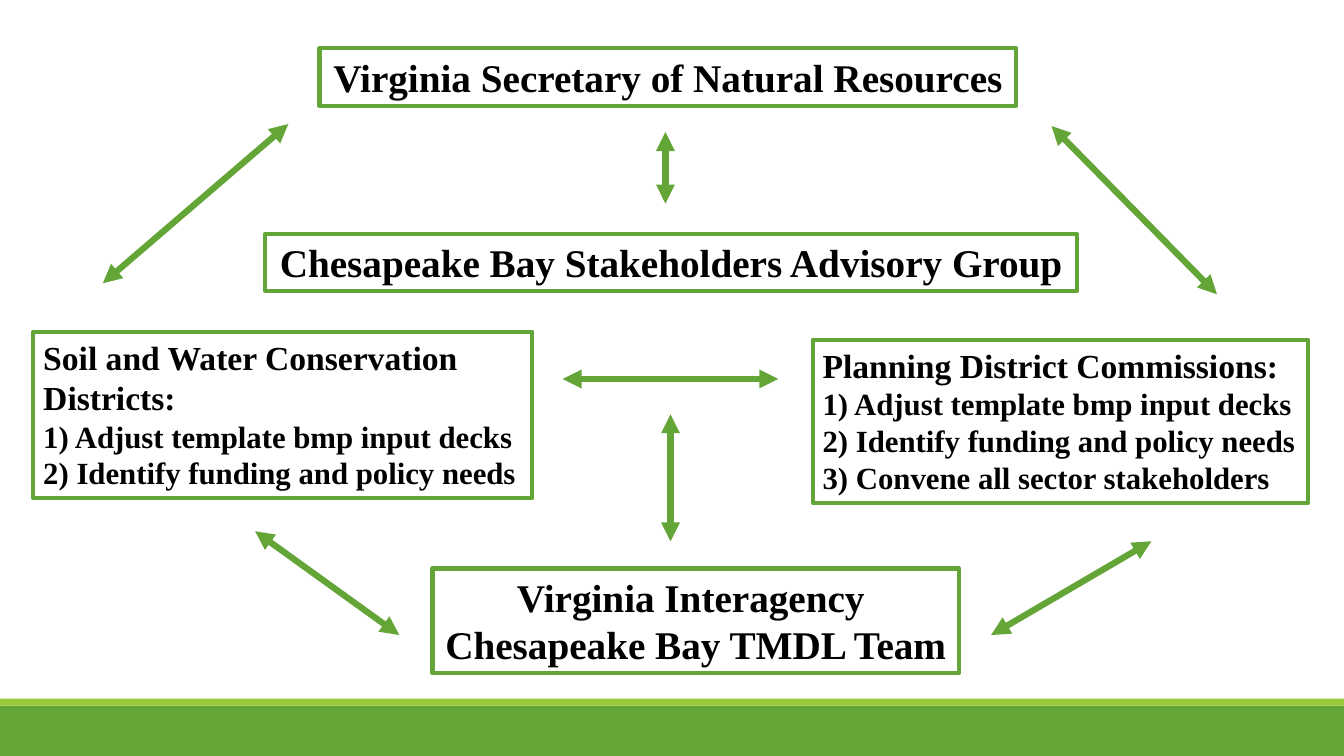
import pptx
import pptx.util
import pptx.dml.color
import pptx.enum.shapes
import pptx.enum.text
import pptx.oxml.ns
import lxml.etree

WIDE, HIGH = 13.33, 7.5
FONT = "Times New Roman"
HUES = {"green": "63A537", "lime": "99CB38", "ink": "000000"}

BANDS = [
    ("green", (0, 93.33, 100, 6.67)),
    ("lime", (0, 92.4, 100, 0.93)),
]

BOXES = [
    ((23.78, 6.4, 51.84, 7.6), "CENTER",
     [("Virginia Secretary of Natural Resources", 28)]),
    ((19.73, 30.93, 60.39, 7.6), "CENTER",
     [("Chesapeake Bay Stakeholders Advisory Group", 28)]),
    ((60.47, 44.93, 36.83, 21.6), "LEFT",
     [("Planning District Commissions:", 24),
      ("1) Adjust template bmp input decks", 22),
      ("2) Identify funding and policy needs", 22),
      ("3) Convene all sector stakeholders", 22)]),
    ((2.48, 43.87, 37.13, 22), "LEFT",
     [("Soil and Water Conservation", 24),
      ("Districts:", 24),
      ("1) Adjust template bmp input decks", 22),
      ("2) Identify funding and policy needs", 22)]),
    ((32.18, 75.2, 39.16, 13.87), "CENTER",
     [("Virginia Interagency ", 28),
      ("Chesapeake Bay TMDL Team", 28)]),
]

ARROWS = [
    (41.86, 50.13, 57.91, 50.13),
    (49.51, 17.47, 49.51, 26.93),
    (18.98, 70.27, 29.71, 84),
    (85.67, 71.6, 73.74, 84),
    (21.46, 16.4, 7.65, 37.47),
    (90.55, 38.93, 78.24, 16.67),
    (49.89, 54.8, 49.89, 71.6),
]


def hue(name):
    return pptx.dml.color.RGBColor.from_string(HUES[name])


def place(shares):
    sides = (WIDE, HIGH, WIDE, HIGH)
    return [pptx.util.Inches(part * side / 100) for part, side in zip(shares, sides)]


def add_band(slide, name, spot):
    kind = pptx.enum.shapes.MSO_SHAPE.RECTANGLE
    band = slide.shapes.add_shape(kind, *place(spot))
    band.shadow.inherit = False
    band.fill.solid()
    band.fill.fore_color.rgb = hue(name)
    band.line.fill.background()


def add_box(slide, spot, align, lines):
    box = slide.shapes.add_textbox(*place(spot))
    box.line.color.rgb = hue("green")
    box.line.width = pptx.util.Pt(3)
    frame = box.text_frame
    frame.word_wrap = False
    frame.auto_size = pptx.enum.text.MSO_AUTO_SIZE.SHAPE_TO_FIT_TEXT
    frame.text = "\n".join(text for text, size in lines)
    for para, (text, size) in zip(frame.paragraphs, lines):
        para.alignment = pptx.enum.text.PP_ALIGN[align]
        font = para.runs[0].font
        font.name = FONT
        font.size = pptx.util.Pt(size)
        font.bold = True
        font.color.rgb = hue("ink")


def add_arrow(slide, ends):
    kind = pptx.enum.shapes.MSO_CONNECTOR.STRAIGHT
    arrow = slide.shapes.add_connector(kind, *place(ends))
    arrow.line.color.rgb = hue("green")
    arrow.line.width = pptx.util.Pt(4.5)
    qn = pptx.oxml.ns.qn
    props = arrow.element.spPr
    edge = props.find(qn("a:ln"))
    for tag in ("a:headEnd", "a:tailEnd"):
        lxml.etree.SubElement(edge, qn(tag), type="triangle")
    lxml.etree.SubElement(props, qn("a:effectLst"))


def main():
    deck = pptx.Presentation()
    deck.slide_width = pptx.util.Inches(WIDE)
    deck.slide_height = pptx.util.Inches(HIGH)
    slide = deck.slides.add_slide(deck.slide_layouts[6])
    for band in BANDS:
        add_band(slide, *band)
    for box in BOXES:
        add_box(slide, *box)
    for ends in ARROWS:
        add_arrow(slide, ends)
    deck.save("out.pptx")


if __name__ == "__main__":
    main()
